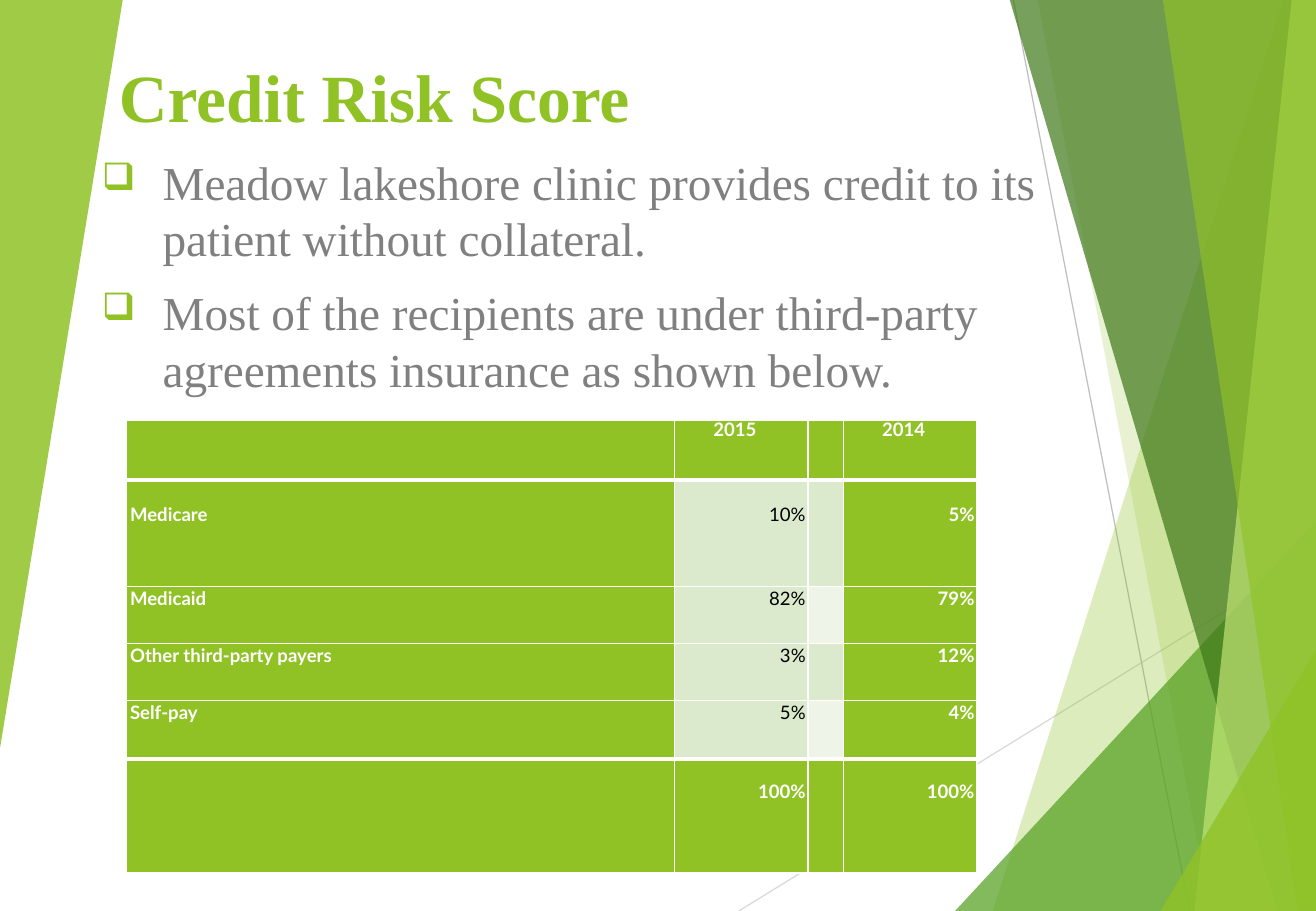
from lxml import etree
from pptx import Presentation
from pptx.dml.color import RGBColor
from pptx.enum.shapes import MSO_CONNECTOR
from pptx.enum.text import MSO_ANCHOR, PP_ALIGN
from pptx.oxml.ns import qn
from pptx.util import Pt

PX = 9144
WIDE, HIGH = 1083, 750
LINE = MSO_CONNECTOR.STRAIGHT
TOP, BOTTOM = MSO_ANCHOR.TOP, MSO_ANCHOR.BOTTOM
LEFT, RIGHT = PP_ALIGN.LEFT, PP_ALIGN.RIGHT
SERIF, SANS = "Times New Roman", "Lato"
GREEN, WHITE, BLACK, GREY = "90C226", "FFFFFF", "000000", "808080"
PALE, FAINT = "DBE9CD", "EEF4E8"

TITLE = "Credit Risk Score"
POINTS = [
    "Meadow lakeshore clinic provides credit to its patient without collateral.",
    "Most of the recipients are under third-party agreements insurance as shown below.",
]
TABLE = [
    ("", "2015", "", "2014"),
    ("Medicare", "10%", "", "5%"),
    ("Medicaid", "82%", "", "79%"),
    ("Other third-party payers", "3%", "", "12%"),
    ("Self-pay", "5%", "", "4%"),
    ("", "100%", "", "100%"),
]
COLS = [451, 110, 29, 110]
ROWS = [49, 88, 47, 47, 48, 94]
DROPS = [0, 19, 0, 0, 0, 17]
LAST = len(TABLE) - 1

RAYS = [
    ((608, 750), (1083, 457), "D9D9D9"),
    ((834, 0), (979, 750), "BFBFBF"),
]
SHARDS = [
    ([(1056, 0), (817, 750), (1083, 750), (1083, 0)], GREEN, 30),
    ([(854, 0), (996, 750), (1083, 750), (1083, 0)], GREEN, 20),
    ([(786, 750), (1083, 429), (1083, 750)], "54A021", 72),
    ([(831, 0), (1051, 750), (1083, 750), (1083, 0)], "3F7819", 70),
    ([(1063, 0), (983, 750), (1083, 750), (1083, 0)], "C0E474", 70),
    ([(957, 0), (1068, 750), (1083, 750), (1083, 0)], GREEN, 65),
    ([(955, 750), (1083, 535), (1083, 750)], GREEN, 80),
    ([(0, 0), (101, 0), (0, 616)], GREEN, 85),
]


def px(*nums):
    return [n * PX for n in nums]


def rgb(tone):
    return RGBColor.from_string(tone)


def node(base, tag, **attrs):
    return etree.SubElement(base, qn(tag), attrs)


def paint(item, tone):
    item.fill.solid()
    item.fill.fore_color.rgb = rgb(tone)


def write(para, text, face, size, tone, bold=False):
    run = para.add_run()
    run.text = text
    font = run.font
    font.name, font.size, font.bold = face, Pt(size), bold
    font.color.rgb = rgb(tone)


def ray(start, end, tone):
    line = slide.shapes.add_connector(LINE, *px(*start, *end))
    line.line.color.rgb = rgb(tone)
    line.line.width = Pt(0.75)
    node(line._element.spPr, "a:effectLst")


def shard(dots, tone, alpha):
    pen = slide.shapes.build_freeform(*dots[0], scale=PX)
    pen.add_line_segments(dots[1:], close=True)
    shape = pen.convert_to_shape()
    shape.shadow.inherit = False
    shape.line.fill.background()
    paint(shape, tone)
    hue = shape._element.spPr.find(".//" + qn("a:srgbClr"))
    node(hue, "a:alpha", val=str(alpha * 1000))


def frame(box, anchor):
    text = slide.shapes.add_textbox(*px(*box)).text_frame
    text.word_wrap = True
    text.vertical_anchor = anchor
    return text


def bullet(para):
    props = para._p.get_or_add_pPr()
    props.set("marL", str(50 * PX))
    props.set("indent", str(-50 * PX))
    node(node(props, "a:buClr"), "a:srgbClr", val=GREEN)
    node(props, "a:buSzPct", val="80000")
    node(props, "a:buChar", char="❑")


def border(cell, row):
    props = cell._tc.get_or_add_tcPr()
    thick = {"T": row in (1, LAST), "B": row in (0, LAST - 1)}
    for spot, side in enumerate("LRTB"):
        width = 3 if thick.get(side) else 1
        edge = etree.Element(qn("a:ln" + side), w=str(Pt(width)))
        node(node(edge, "a:solidFill"), "a:srgbClr", val=WHITE)
        props.insert(spot, edge)


def shade(row, col):
    if row in (0, LAST) or col in (0, 3):
        return GREEN
    return FAINT if col == 2 and row % 2 == 0 else PALE


def fill_cell(cell, row, col, text):
    tone = shade(row, col)
    paint(cell, tone)
    border(cell, row)
    if not text:
        return
    head = row == 0
    cell.margin_left = (32 if head else 0 if col else 3) * PX
    cell.margin_right = 2 * PX
    cell.margin_bottom = 0
    cell.margin_top = DROPS[row] * PX
    cell.vertical_anchor = TOP
    para = cell.text_frame.paragraphs[0]
    para.alignment = RIGHT if col and not head else LEFT
    if head:
        para.line_spacing = Pt(12.2)
    dark = tone == GREEN
    write(para, text, SANS, 11, WHITE if dark else BLACK, dark)


deck = Presentation()
deck.slide_width, deck.slide_height = px(WIDE, HIGH)
slide = deck.slides.add_slide(deck.slide_layouts[6])

for item in RAYS:
    ray(*item)
for item in SHARDS:
    shard(*item)

title = frame((88, 47, 826, 70), BOTTOM)
write(title.paragraphs[0], TITLE, SERIF, 40, GREEN, True)

body = frame((74, 121, 846, 220), TOP)
for spot, point in enumerate(POINTS):
    para = body.add_paragraph() if spot else body.paragraphs[0]
    bullet(para)
    if spot:
        para.space_before = Pt(10)
    write(para, point, SERIF, 28, GREY)

size = px(104, 346, sum(COLS), sum(ROWS))
grid = slide.shapes.add_table(len(ROWS), len(COLS), *size).table
grid.horz_banding = False
for col, wide in zip(grid.columns, COLS):
    col.width = wide * PX
for row, high in zip(grid.rows, ROWS):
    row.height = high * PX
for row, texts in enumerate(TABLE):
    for col, text in enumerate(texts):
        fill_cell(grid.cell(row, col), row, col, text)

deck.save("out.pptx")
